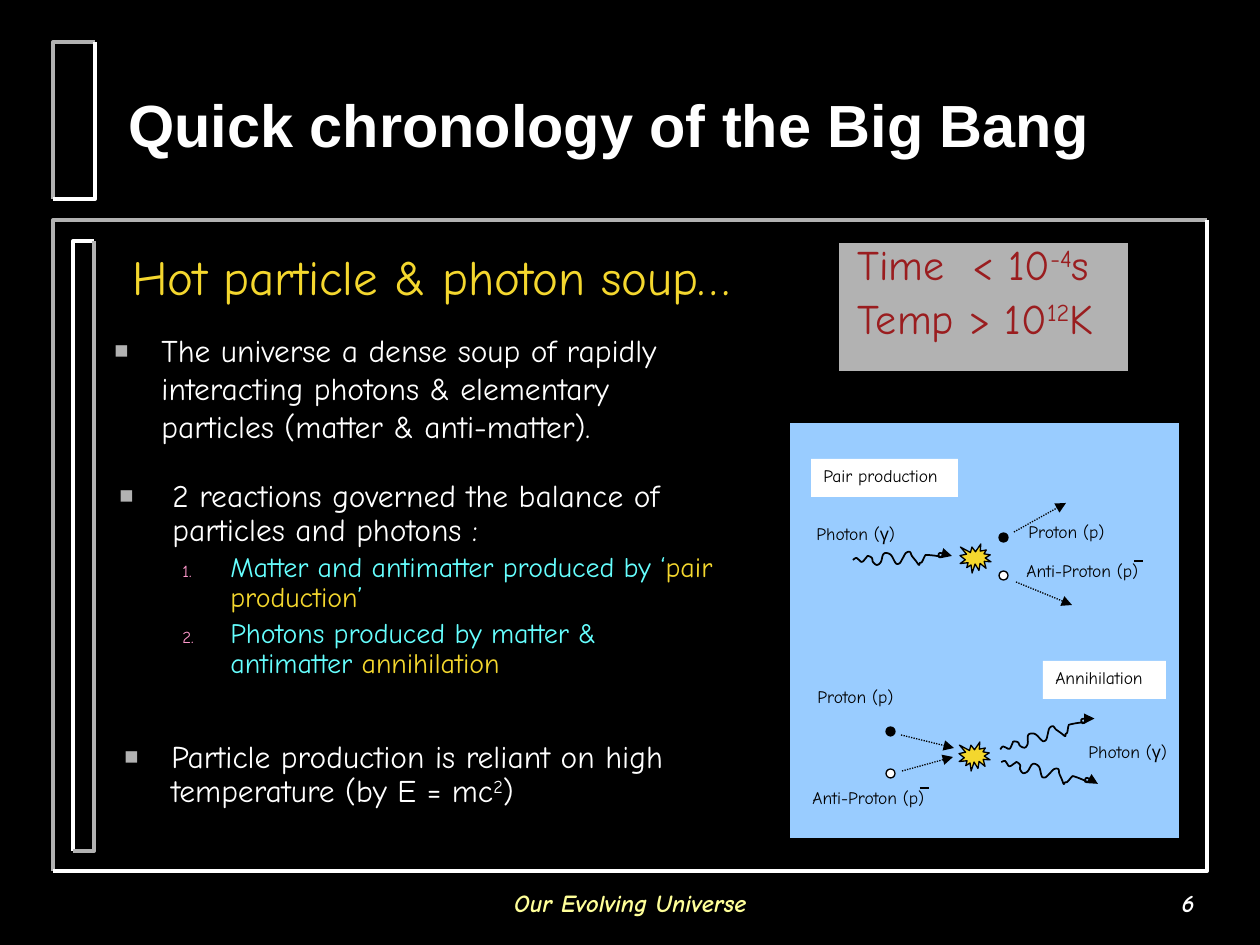
import lxml.etree
import pptx
import pptx.dml.color
import pptx.enum.dml
import pptx.enum.shapes
import pptx.enum.text
import pptx.oxml.ns
import pptx.util

PX = 914400 / 126
COLORS = {
    "black": "000000", "white": "FFFFFF", "grey": "B2B2B2", "sky": "99CCFF",
    "yellow": "F4D72E", "cyan": "66FFFF", "pink": "FF99CC", "red": "9A1D1F",
    "cream": "FFFF99",
}
SHAPES = pptx.enum.shapes.MSO_SHAPE
ALIGN = pptx.enum.text.PP_ALIGN
MIDDLE = pptx.enum.text.MSO_ANCHOR.MIDDLE
TOP = pptx.enum.text.MSO_ANCHOR.TOP
# Photon wave, ending in a small hook before the arrowhead
WAVE = [
    (0, 8), (3, 6), (5, 7), (9, 10), (13, 6), (15, 4), (19, 6), (20, 10),
    (24, 13), (28, 10), (30, 3), (33, 1), (38, 3), (42, 10), (44, 12), (47, 11),
    (50, 6), (53, 1), (57, 0), (59, 4), (63, 9), (66, 13), (67, 11), (69, 10),
    (72, 4), (74, 3), (84, 4), (88, 5), (86, 5), (87, 1), (99, 4),
]


def emu(*lengths):
    return [round(length * PX) for length in lengths]


def rgb(name):
    return pptx.dml.color.RGBColor.from_string(COLORS[name])


def add_tag(parent, tag, **attributes):
    child = lxml.etree.SubElement(parent, pptx.oxml.ns.qn(tag))
    for key, value in attributes.items():
        child.set(key, str(value))
    return child


def style_line(line, color, width, arrow=False):
    line.color.rgb = rgb(color)
    line.width = pptx.util.Pt(width)
    if arrow:
        add_tag(line._get_or_add_ln(), "a:tailEnd", type="triangle")


def add_para(frame, spans, size=18, color="white", font="Comic Neue", bold=None,
             italic=None, align=None, margin=0, indent=0, spacing=None,
             before=0, bullet=None):
    """Each span is a text, or a tuple of text, colour and baseline percent."""
    first = frame.paragraphs[0]
    para = frame.add_paragraph() if first.runs else first
    para.alignment = align
    if spacing:
        para.line_spacing = spacing
    para.space_before = pptx.util.Pt(before)
    properties = para._p.get_or_add_pPr()
    for key, value in zip(("marL", "indent"), emu(margin, indent)):
        properties.set(key, str(value))
    if bullet:
        numbered = bullet == "number"
        tint = add_tag(properties, "a:buClr")
        add_tag(tint, "a:srgbClr", val=COLORS["pink" if numbered else "grey"])
        add_tag(properties, "a:buSzPct", val=60000 if numbered else 75000)
        if numbered:
            add_tag(properties, "a:buAutoNum", type="arabicPeriod")
        else:
            add_tag(properties, "a:buFont", typeface="Arial")
            add_tag(properties, "a:buChar", char=bullet)
    for item in spans:
        text, tint, raised = item if isinstance(item, tuple) else (item, color, 0)
        span = para.add_run()
        span.text = text
        span.font.name, span.font.size = font, pptx.util.Pt(size)
        span.font.bold, span.font.italic = bold, italic
        span.font.color.rgb = rgb(tint)
        if raised:
            span._r.get_or_add_rPr().set("baseline", str(raised * 1000))


def add_text(page, box, *paragraphs, wrap=True, anchor=TOP, fill=None, **style):
    shape = page.shapes.add_textbox(*emu(*box))
    if fill:
        shape.fill.solid()
        shape.fill.fore_color.rgb = rgb(fill)
    frame = shape.text_frame
    frame.word_wrap, frame.vertical_anchor = wrap, anchor
    for spans in paragraphs:
        add_para(frame, spans, **style)
    return frame


def add_solid(page, kind, box, fill):
    shape = page.shapes.add_shape(kind, *emu(*box))
    shape.shadow.inherit = False
    shape.fill.solid()
    shape.fill.fore_color.rgb = rgb(fill)
    style_line(shape.line, "black", 0.75)


def add_straight(page, start, end, width=0.75, arrow=True):
    line = page.shapes.add_connector(
        pptx.enum.shapes.MSO_CONNECTOR.STRAIGHT, *emu(*start, *end))
    if arrow:
        line.line.dash_style = pptx.enum.dml.MSO_LINE.ROUND_DOT
    style_line(line.line, "black", width, arrow)
    add_tag(line._element.spPr, "a:effectLst")


def add_path(page, points, color, width, arrow=False):
    points = [emu(*point) for point in points]
    builder = page.shapes.build_freeform(*points[0], scale=1.0)
    builder.add_line_segments(points[1:], close=False)
    shape = builder.convert_to_shape()
    shape.shadow.inherit = False
    shape.fill.background()
    style_line(shape.line, color, width, arrow)
    return shape


def smooth(points, steps=4):
    """Catmull-Rom curve through the points."""
    padded = [points[0], *points, points[-1]]
    curve = [points[0]]
    for a, b, c, d in zip(padded, padded[1:], padded[2:], padded[3:]):
        for t in (step / steps for step in range(1, steps + 1)):
            curve.append(tuple(
                q + t * (r - p + t * (2 * p - 5 * q + 4 * r - s
                                      + t * (3 * (q - r) + s - p))) / 2
                for p, q, r, s in zip(a, b, c, d)))
    return curve


def add_frame(page, box, upper, lower):
    left, top, width, height = box
    right, bottom = left + width, top + height
    for corner, color in (((left, top), upper), ((right, bottom), lower)):
        add_path(page, [(right, top), corner, (left, bottom)], color, 2.25)


def add_reaction(page, box, caption, caption_box, burst, waves, particles,
                 arrows, photon, proton, antiproton):
    left, top = box[:2]

    def at(x, y, *size):
        return (left + x, top + y, *size)

    def label(text, place, width, height=38, **style):
        add_text(page, at(*place, width, height), [text], wrap=False,
                 size=10, color="black", **style)

    # Photons
    for x, y, angle in waves:
        wave = [at(x + dx, y + dy) for dx, dy in smooth(WAVE)]
        add_path(page, wave, "black", 1, arrow=True).rotation = angle
    # Particle, antiparticle and the collision
    for place, fill in zip(particles, ("black", "white")):
        add_solid(page, SHAPES.OVAL, at(*place, 9, 9), fill)
    add_solid(page, SHAPES.EXPLOSION1, at(*burst, 31, 29), "yellow")
    for start, end in arrows:
        add_straight(page, at(*start), at(*end))
    # Labels, with the bar over the antiproton's p
    label("Photon (γ)", photon, 106)
    label("Proton (p)", proton, 105)
    label("Anti-Proton (p)", antiproton, 146)
    x, y = antiproton
    add_straight(page, at(x + 120, y + 7), at(x + 129, y + 7), 1, arrow=False)
    label(caption, caption_box[:2], caption_box[2], fill="white")


def add_diagram(page, box):
    left, top, width, height = box
    add_solid(page, SHAPES.RECTANGLE, box, "sky")
    half = height // 2
    add_reaction(
        page, (left, top, width, half), "Pair production", (22, 37, 147),
        burst=(171, 122), waves=[(64, 130, 0)], particles=[(210, 111), (210, 149)],
        arrows=[((225, 110), (277, 81)), ((227, 160), (283, 183))],
        photon=(15, 95), proton=(227, 93), antiproton=(225, 132))
    add_reaction(
        page, (left, top + half, width, half), "Annihilation", (254, 31, 123),
        burst=(170, 112), waves=[(209, 98, 344.2), (211, 137, 15)],
        particles=[(97, 97), (97, 139)],
        arrows=[((112, 105), (165, 118)), ((113, 141), (164, 127))],
        photon=(287, 105), proton=(16, 50), antiproton=(11, 151))


def add_conditions(page, box):
    left, top, width, height = box
    add_solid(page, SHAPES.RECTANGLE, box, "grey")
    add_text(page, (left - 56, top - 4, 336, height),
             ["Time  < 10", ("-4", "red", 30), "s"],
             ["Temp > 10", ("12", "red", 30), "K"],
             wrap=False, size=24, color="red", margin=63, spacing=0.9, before=5)


def add_body(page, box):
    left, top = box[:2]
    add_text(page, (left, top, 806, 103), ["Hot particle & photon soup…"],
             size=28, color="yellow", margin=102, indent=-39, spacing=0.9, before=6)
    add_text(page, (left + 45, top + 78, 626, 523),
             ["The universe a dense soup of rapidly interacting photons & "
              "elementary particles (matter & anti-matter)."],
             margin=47, indent=-47, before=4, bullet="■")
    frame = add_text(page, (left + 50, top + 227, 619, 204),
                     ["2 reactions governed the balance of particles and photons :"],
                     margin=53, indent=-53, spacing=0.9, before=4, bullet="■")
    for spans in (
            ["Matter and antimatter produced by ‘", ("pair production", "yellow", 0), "’"],
            ["Photons produced by matter & antimatter ", ("annihilation", "yellow", 0)]):
        add_para(frame, spans, size=16, color="cyan", margin=111, indent=-48,
                 spacing=0.9, before=3, bullet="number")
    add_text(page, (left + 55, top + 488, 619, 105),
             ["Particle production is reliant on high temperature (by E = mc",
              ("2", "white", 30), ")"],
             margin=47, indent=-47, spacing=0.9, before=4, bullet="■")


def add_footer(page, box):
    left, top, width, height = box
    style = dict(wrap=False, anchor=MIDDLE, size=14, bold=True, italic=True)
    add_text(page, (left, top, 399, height), ["Our Evolving Universe"],
             color="cream", align=ALIGN.CENTER, **style)
    add_text(page, (left + width - 262, top, 262, height), ["6"],
             align=ALIGN.RIGHT, **style)


def main():
    deck = pptx.Presentation()
    deck.slide_width, deck.slide_height = emu(1260, 945)
    page = deck.slides.add_slide(deck.slide_layouts[6])
    page.background.fill.solid()
    page.background.fill.fore_color.rgb = rgb("black")
    # Bevelled frames
    add_frame(page, (53, 220, 1154, 651), "grey", "white")
    add_frame(page, (73, 241, 21, 610), "white", "grey")
    add_frame(page, (53, 42, 42, 157), "grey", "white")
    # Content
    add_footer(page, (431, 871, 776, 63))
    add_diagram(page, (789, 422, 391, 417))
    add_conditions(page, (838, 242, 291, 130))
    add_body(page, (57, 247, 806, 601))
    add_text(page, (116, 48, 1071, 152), ["Quick chronology of the Big Bang"],
             anchor=MIDDLE, size=34, font="Arial", bold=True)
    deck.save("out.pptx")


if __name__ == "__main__":
    main()
